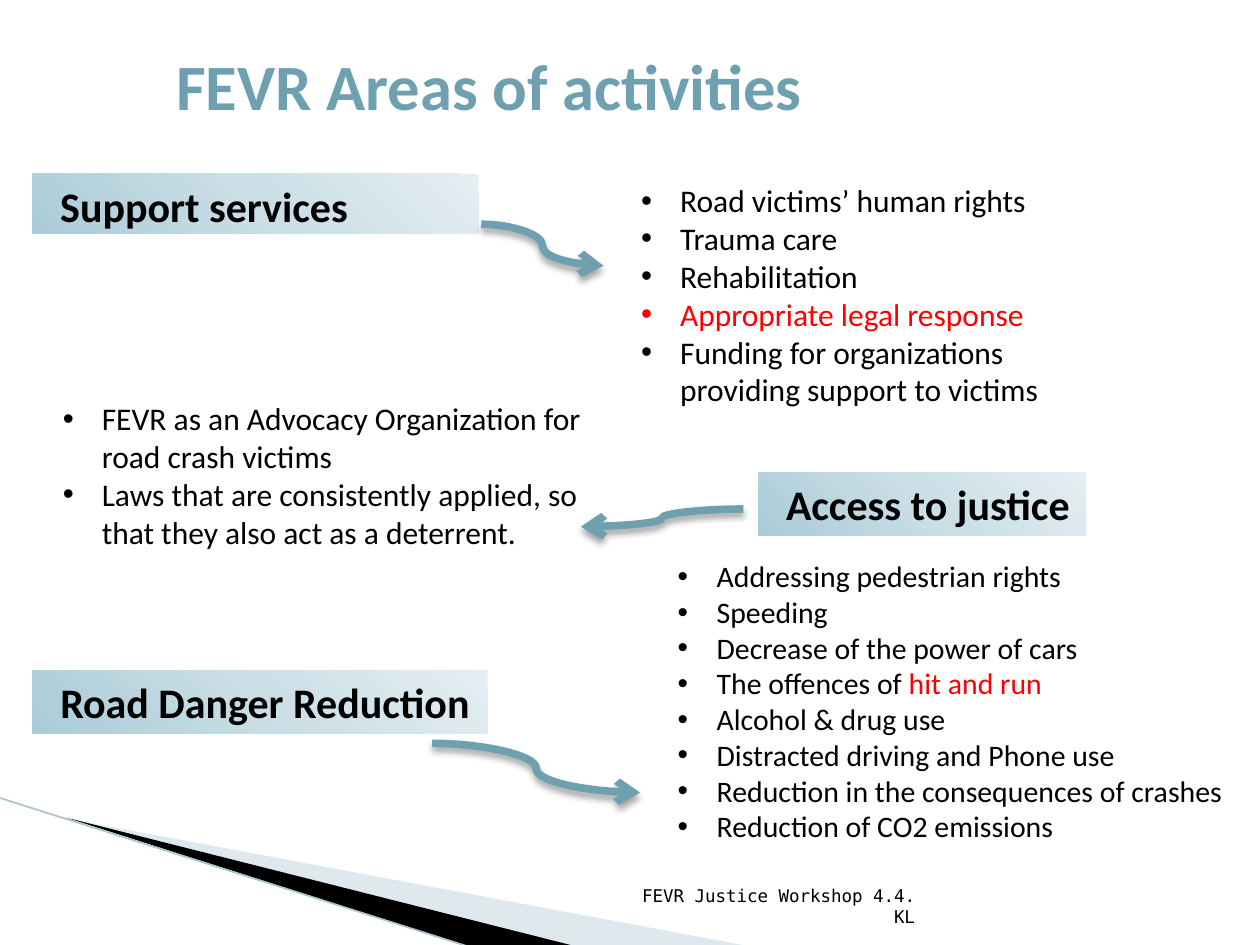
from dataclasses import dataclass

from lxml import etree
from pptx import Presentation
from pptx.dml.color import RGBColor
from pptx.enum import shapes, text
from pptx.oxml import ns, parse_xml
from pptx.util import Inches, Pt


@dataclass(frozen=True)
class Theme:
    font: str = "Calibri"
    mono: str = "DejaVu Sans Mono"
    ink: str = "000000"
    alert: str = "FF0000"
    accent: str = "6EA0B0"
    pale: str = "B1C9D2"
    edge: str = "AAC4CE"
    gradient: tuple = ((0, "A9CBD8"), (50, "CADEE6"), (100, "E5EEF2"))
    title: float = 36.9
    heading: float = 24
    body: float = 18
    small: float = 17
    footer: float = 10


T = Theme()
A = ns.nsdecls("a")


def rgb(value):
    return RGBColor.from_string(value)


def add_run(p, content, size=T.body, color=T.ink, bold=False, font=T.font):
    r = p.add_run()
    r.text = content
    r.font.size, r.font.bold, r.font.name = Pt(size), bold, font
    r.font.color.rgb = rgb(color)


def add_text(s, box, content, anchor=text.MSO_ANCHOR.TOP,
             align=text.PP_ALIGN.LEFT, **style):
    sp = s.shapes.add_textbox(*map(Inches, box))
    tf = sp.text_frame
    tf.word_wrap, tf.vertical_anchor = True, anchor
    p = tf.paragraphs[0]
    p.alignment = align
    add_run(p, content, **style)


def indent(p, left, hanging=0):
    pPr = p._p.get_or_add_pPr()
    pPr.set("marL", str(Inches(left)))
    pPr.set("indent", str(Inches(-hanging)))
    return pPr


def add_bullets(s, box, items, size=T.body):
    """Each item is a list of (text, colour) runs."""
    tf = s.shapes.add_textbox(*map(Inches, box)).text_frame
    tf.word_wrap = True
    for i, runs in enumerate(items):
        p = tf.add_paragraph() if i else tf.paragraphs[0]
        pPr = indent(p, 0.43, 0.31)
        etree.SubElement(pPr, ns.qn("a:buFont")).set("typeface", "Arial")
        etree.SubElement(pPr, ns.qn("a:buChar")).set("char", "•")
        for content, color in runs:
            add_run(p, content, size, color)


def add_heading(s, box, content):
    """Bold label on a bar whose gradient spreads from the lower left."""
    sp = s.shapes.add_shape(shapes.MSO_SHAPE.RECTANGLE, *map(Inches, box))
    sp.shadow.inherit = False
    sp.line.fill.background()
    stops = "".join(
        f'<a:gs pos="{pos * 1000}"><a:srgbClr val="{color}"/></a:gs>'
        for pos, color in T.gradient)
    sp._element.spPr.find(ns.qn("a:prstGeom")).addnext(parse_xml(
        f'<a:gradFill {A} rotWithShape="1"><a:gsLst>{stops}</a:gsLst>'
        '<a:path path="circle"><a:fillToRect t="100000" r="100000"/>'
        '</a:path></a:gradFill>'))
    tf = sp.text_frame
    tf.word_wrap, tf.vertical_anchor = True, text.MSO_ANCHOR.TOP
    tf.margin_right = 0
    p = tf.paragraphs[0]
    p.alignment = text.PP_ALIGN.LEFT
    indent(p, 0.12)
    add_run(p, content, T.heading, bold=True)


def add_line(s, kind, start, end, color, width, effects=""):
    c = s.shapes.add_connector(kind, *map(Inches, start + end))
    c.line.color.rgb, c.line.width = rgb(color), Pt(width)
    c._element.spPr.append(
        parse_xml(f"<a:effectLst {A}>{effects}</a:effectLst>"))
    return c


def add_curved_arrow(s, start, end):
    shadow = (f'<a:outerShdw blurRad="{Pt(4)}" dist="{Pt(3)}" dir="5400000" '
              'rotWithShape="0"><a:srgbClr val="000000">'
              '<a:alpha val="35000"/></a:srgbClr></a:outerShdw>')
    c = add_line(s, shapes.MSO_CONNECTOR.CURVE, start, end,
                 T.accent, 4.33, shadow)
    etree.SubElement(c.line._get_or_add_ln(),
                     ns.qn("a:tailEnd")).set("type", "arrow")


def add_wedge(s, points, color, opacity=100):
    start, *rest = [tuple(map(Inches, point)) for point in points]
    builder = s.shapes.build_freeform(*start)
    builder.add_line_segments(rest, close=True)
    sp = builder.convert_to_shape()
    sp.shadow.inherit = False
    sp.line.fill.background()
    sp.fill.solid()
    sp.fill.fore_color.rgb = rgb(color)
    if opacity < 100:
        clr = sp._element.spPr.find(".//" + ns.qn("a:srgbClr"))
        etree.SubElement(clr, ns.qn("a:alpha")).set("val", str(opacity * 1000))


def add_corner(s, box):
    """Fan of wedges in the lower left corner."""
    x, y, w, h = box
    right, bottom = x + w, y + h
    add_wedge(s, [(0.55, 6.5), (right, bottom), (4.56, bottom)], T.pale, 40)
    add_wedge(s, [(0.53, 6.49), (4.57, bottom), (3.72, bottom)], T.ink)
    add_line(s, shapes.MSO_CONNECTOR.STRAIGHT, (x, y), (3.71, bottom),
             T.edge, 0.95)


def plain(*lines):
    return [[(line, T.ink)] for line in lines]


def main():
    prs = Presentation()
    prs.slide_width, prs.slide_height = Inches(10), Inches(7.5)
    s = prs.slides.add_slide(prs.slide_layouts[6])

    add_corner(s, (-0.01, 6.33, 5.96, 1.18))
    add_text(s, (1.3, 0.32, 5.2, 0.71), "FEVR Areas of activities",
             text.MSO_ANCHOR.MIDDLE, size=T.title, color=T.accent, bold=True)

    add_heading(s, (0.26, 1.38, 3.54, 0.47), "Support services")
    add_curved_arrow(s, (3.82, 1.78), (4.79, 2.11))
    add_bullets(s, (4.87, 1.39, 4.04, 1.92), [
        *plain("Road victims’ human rights", "Trauma care", "Rehabilitation"),
        [("Appropriate legal response", T.alert)],
        *plain("Funding for organizations providing support to victims")])

    add_heading(s, (6.02, 3.75, 2.6, 0.5), "Access to justice")
    add_curved_arrow(s, (5.9, 4.04), (4.61, 4.18))
    add_bullets(s, (0.28, 3.12, 4.47, 1.31), plain(
        "FEVR as an Advocacy Organization for road crash victims",
        "Laws that are consistently applied, so that they also act as "
        "a deterrent."))

    add_heading(s, (0.26, 5.32, 3.61, 0.5), "Road Danger Reduction")
    add_curved_arrow(s, (3.43, 5.9), (5.08, 6.29))
    add_bullets(s, (5.16, 4.38, 4.64, 2.39), [
        *plain("Addressing pedestrian rights", "Speeding",
               "Decrease of the power of cars"),
        [("The offences of ", T.ink), ("hit and run", T.alert)],
        *plain("Alcohol & drug use", "Distracted driving and Phone use",
               "Reduction in the consequences of crashes",
               "Reduction of CO2 emissions")], T.small)

    add_text(s, (4.79, 7.01, 2.57, 0.4), "FEVR Justice Workshop 4.4. KL",
             text.MSO_ANCHOR.BOTTOM, text.PP_ALIGN.RIGHT,
             size=T.footer, font=T.mono)
    prs.save("out.pptx")


if __name__ == "__main__":
    main()
